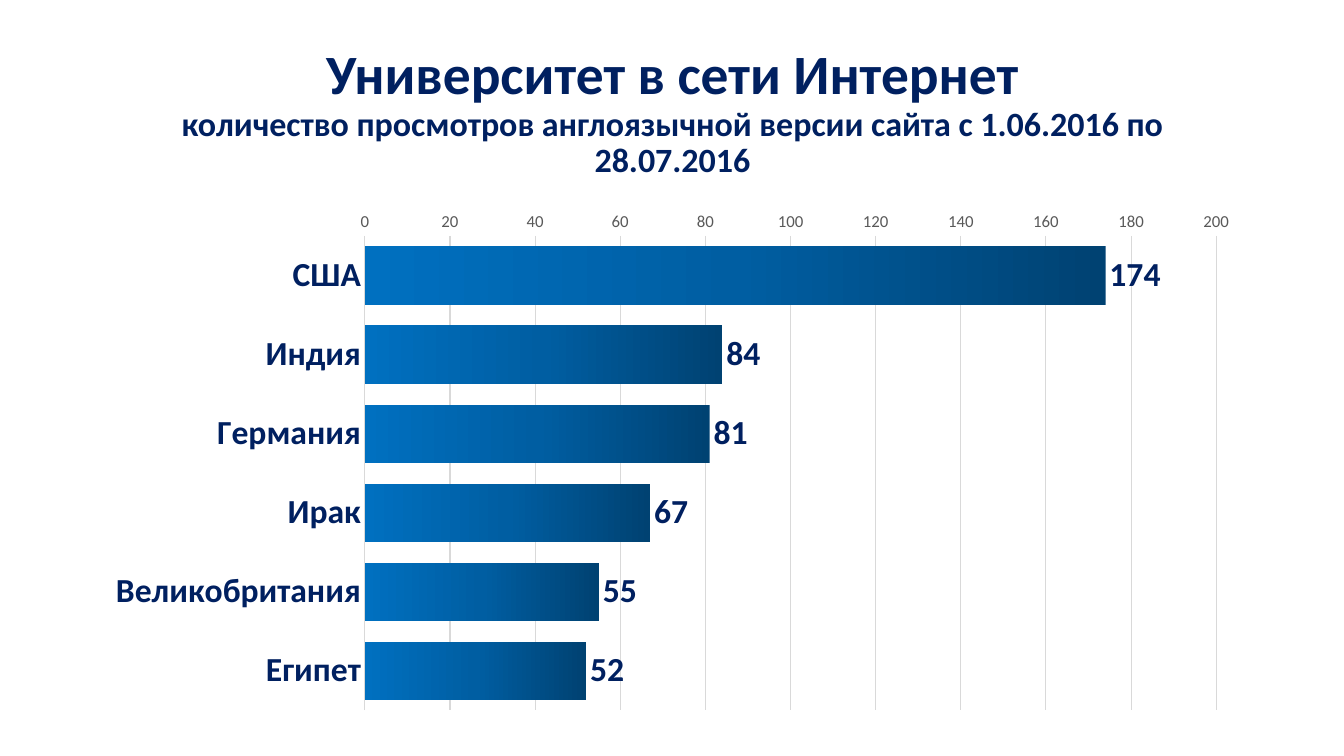
from lxml import etree
from pptx import Presentation
from pptx.chart.data import CategoryChartData
from pptx.dml.color import RGBColor
from pptx.enum.chart import XL_CHART_TYPE, XL_LABEL_POSITION, XL_TICK_MARK
from pptx.enum.text import MSO_ANCHOR, PP_ALIGN
from pptx.oxml.ns import qn
from pptx.util import Inches, Pt

BAR_CLUSTERED = XL_CHART_TYPE.BAR_CLUSTERED
OUTSIDE_END = XL_LABEL_POSITION.OUTSIDE_END
NO_TICK = XL_TICK_MARK.NONE
MIDDLE = MSO_ANCHOR.MIDDLE
CENTER = PP_ALIGN.CENTER

HEADING = "Университет в сети Интернет"
SUBHEADING = "количество просмотров англоязычной версии сайта с 1.06.2016 по 28.07.2016"
VIEWS = {
    "США": 174,
    "Индия": 84,
    "Германия": 81,
    "Ирак": 67,
    "Великобритания": 55,
    "Египет": 52,
}
SCALE_MAX, SCALE_STEP = 200, 20

THEME = {
    "font": "Calibri",
    "navy": "002060",
    "grey": "595959",
    "rule": "D9D9D9",
    "bar_stops": [(0, "004272"), (50, "005EA2"), (100, "0070C0")],
    "heading": 39.6,
    "subheading": 24.3,
    "label": 24,
    "scale": 12,
}

LEFT, WIDTH = Inches(0.92), Inches(11.5)


def style_font(font, size, color, bold):
    font.name = THEME["font"]
    font.size = Pt(size)
    font.bold = bold
    font.color.rgb = RGBColor.from_string(THEME[color])


def style_rule(line):
    line.color.rgb = RGBColor.from_string(THEME["rule"])
    line.width = Pt(0.75)


def fill_with_gradient(bars):
    bars.format.fill.gradient()
    bars.format.fill.gradient_angle = 180
    stops = next(bars._element.iter(qn("a:gsLst")))
    for stop in list(stops):
        stops.remove(stop)
    for percent, color in THEME["bar_stops"]:
        stop = etree.SubElement(stops, qn("a:gs"), pos=str(percent * 1000))
        etree.SubElement(stop, qn("a:srgbClr"), val=color)


def add_title(slide):
    frame = slide.shapes.add_textbox(LEFT, Inches(0.4), WIDTH, Inches(1.45)).text_frame
    frame.word_wrap = True
    frame.vertical_anchor = MIDDLE
    title = frame.paragraphs[0]
    title.alignment = CENTER
    title.line_spacing = 0.9
    style_font(title.font, THEME["heading"], "navy", True)
    title.add_run().text = HEADING
    title.add_line_break()
    subheading = title.add_run()
    subheading.text = SUBHEADING
    subheading.font.size = Pt(THEME["subheading"])


def add_views_chart(slide):
    data = CategoryChartData()
    data.categories = list(VIEWS)
    data.add_series("Series 1", list(VIEWS.values()))
    chart = slide.shapes.add_chart(
        BAR_CLUSTERED, LEFT, Inches(2), WIDTH, Inches(5.15), data
    ).chart
    chart.has_legend = False
    chart.has_title = False
    chart.font.name = THEME["font"]
    chart.font.size = Pt(10)

    countries = chart.category_axis
    countries.reverse_order = True
    countries.major_tick_mark = countries.minor_tick_mark = NO_TICK
    style_font(countries.tick_labels.font, THEME["label"], "navy", True)
    style_rule(countries.format.line)

    scale = chart.value_axis
    scale.minimum_scale, scale.maximum_scale = 0, SCALE_MAX
    scale.major_unit = SCALE_STEP
    scale.major_tick_mark = scale.minor_tick_mark = NO_TICK
    scale.format.line.fill.background()
    style_font(scale.tick_labels.font, THEME["scale"], "grey", False)
    style_rule(scale.major_gridlines.format.line)

    plot = chart.plots[0]
    plot.gap_width = 36
    plot.vary_by_categories = False
    bars = plot.series[0]
    bars.invert_if_negative = False
    fill_with_gradient(bars)
    labels = bars.data_labels
    labels.show_value = True
    labels.position = OUTSIDE_END
    style_font(labels.font, THEME["label"], "navy", True)


def main():
    deck = Presentation()
    deck.slide_width, deck.slide_height = Inches(13.33), Inches(7.5)
    slide = deck.slides.add_slide(deck.slide_layouts[6])
    add_views_chart(slide)
    add_title(slide)
    deck.save("out.pptx")


if __name__ == "__main__":
    main()
